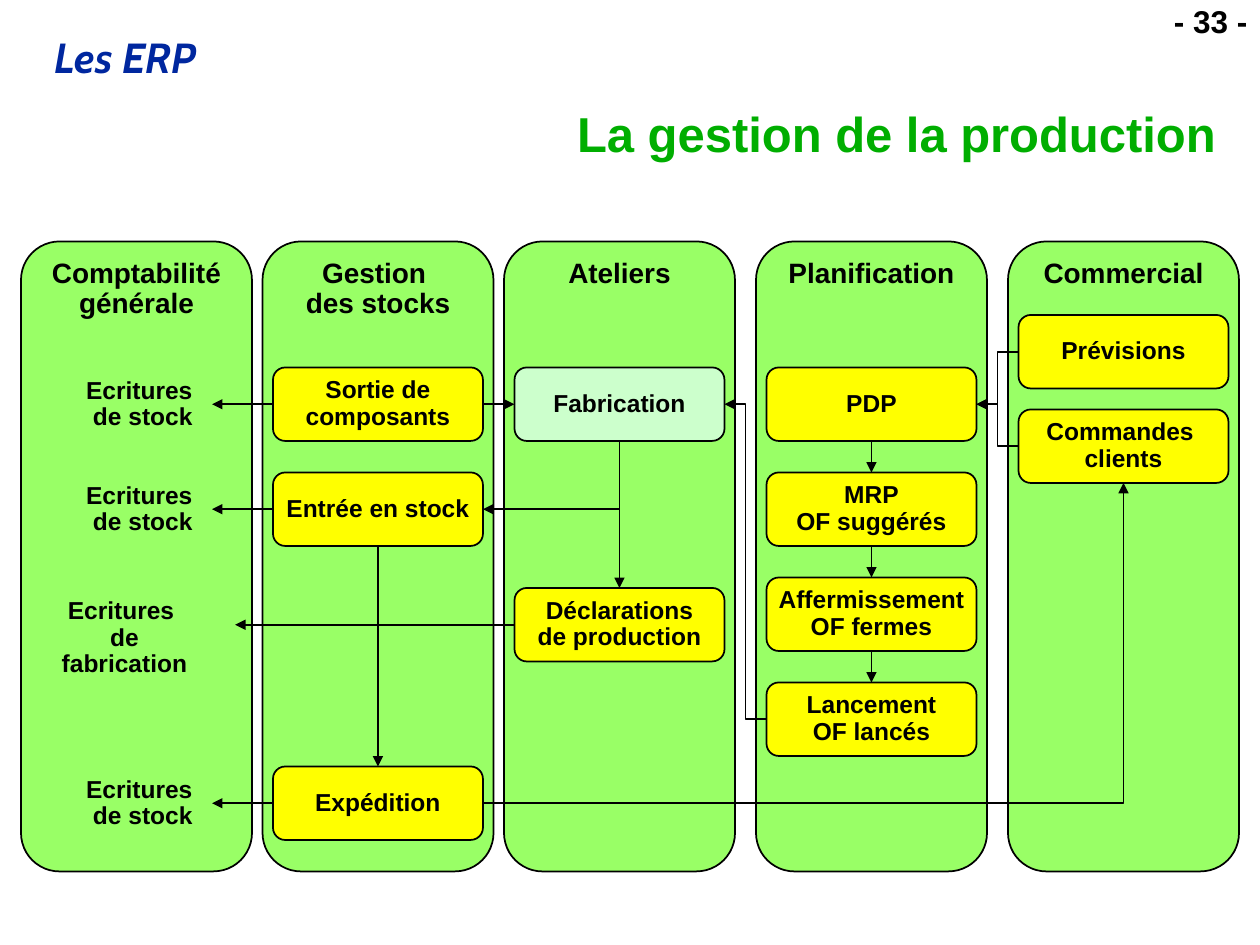
from dataclasses import dataclass

from pptx import Presentation
from pptx.dml.color import RGBColor
from pptx.enum.shapes import MSO_CONNECTOR as CONN, MSO_SHAPE
from pptx.enum.text import MSO_ANCHOR as ANCHOR, PP_ALIGN as ALIGN
from pptx.oxml.ns import qn
from pptx.util import Inches, Pt
from lxml.etree import SubElement


@dataclass(frozen=True)
class Theme:
    font: str = "Arial"
    brand_font: str = "Cabin"
    ink: str = "000000"
    brand: str = "00279F"
    title: str = "00AE00"
    column: str = "99FF66"
    box: str = "FFFF00"
    highlight: str = "CCFFCC"
    brand_size: int = 24
    title_size: int = 28
    page_size: int = 18
    head_size: int = 16
    box_size: int = 14


T = Theme()

# Content: lengths in grid units of 1/12 inch; \v is a line break
COLUMNS = [  # left, heading
    (2, "Comptabilité\vgénérale"),
    (25, "Gestion \vdes stocks"),
    (48, "Ateliers"),
    (72, "Planification"),
    (96, "Commercial"),
]
BOXES = {  # key: column, top, text
    "sortie": (1, 35, "Sortie de\vcomposants"),
    "entree": (1, 45, "Entrée en stock"),
    "expedition": (1, 73, "Expédition"),
    "fabrication": (2, 35, "Fabrication"),
    "declarations": (2, 56, "Déclarations\vde production"),
    "pdp": (3, 35, "PDP"),
    "mrp": (3, 45, "MRP\vOF suggérés"),
    "affermissement": (3, 55, "Affermissement\vOF fermes"),
    "lancement": (3, 65, "Lancement\vOF lancés"),
    "previsions": (4, 30, "Prévisions"),
    "commandes": (4, 39, "Commandes \vclients"),
}
STOCK = "Ecritures \nde stock"
LABELS = {  # key: source box, left, width, text
    "ecr_sortie": ("sortie", 7, 13.2, STOCK),
    "ecr_entree": ("entree", 7, 13.2, STOCK),
    "ecr_fabrication": ("declarations", 4.8, 17.6, "Ecritures \nde fabrication"),
    "ecr_expedition": ("expedition", 7, 13.2, STOCK),
}
TOP, LEFT, BOTTOM, RIGHT = range(4)
STRAIGHT_ARROWS = [
    ("pdp", BOTTOM, "mrp", TOP),
    ("mrp", BOTTOM, "affermissement", TOP),
    ("affermissement", BOTTOM, "lancement", TOP),
    ("sortie", RIGHT, "fabrication", LEFT),
    ("fabrication", BOTTOM, "declarations", TOP),
    ("entree", BOTTOM, "expedition", TOP),
] + [(source, LEFT, key, RIGHT) for key, (source, *_) in LABELS.items()]
STEP_ARROWS = [
    ("previsions", LEFT, "pdp", RIGHT),
    ("commandes", LEFT, "pdp", RIGHT),
    ("lancement", LEFT, "fabrication", RIGHT),
]
COLUMN_TOP, COLUMN_W, COLUMN_H = 23, 22, 60
BOX_W, BOX_H, LABEL_H = 20, 7, 6.2


def grid(*units):
    return [Inches(u / 12) for u in units]


def rgb(code):
    return RGBColor.from_string(code)


def write(tf, text, size, color=T.ink, align=ALIGN.CENTER, font=T.font, italic=None):
    tf.text = text
    for p in tf.paragraphs:
        p.alignment, p.line_spacing = align, 0.9
        f = p.font
        f.name, f.size, f.bold, f.italic = font, Pt(size), True, italic
        f.color.rgb = rgb(color)


def add_text(s, place, text, size, **style):
    sp = s.shapes.add_textbox(*place)
    write(sp.text_frame, text, size, **style)
    return sp


def add_card(s, place, text, size, fill, anchor):
    sp = s.shapes.add_shape(MSO_SHAPE.ROUNDED_RECTANGLE, *place)
    sp.shadow.inherit = False
    sp.fill.solid()
    sp.fill.fore_color.rgb = rgb(fill)
    sp.line.color.rgb, sp.line.width = rgb(T.ink), Pt(1)
    tf = sp.text_frame
    tf.word_wrap, tf.vertical_anchor = False, anchor
    write(tf, text, size)
    return sp


def add_arrow(s, kind, start, start_side, stop, stop_side, corner=False):
    c = s.shapes.add_connector(kind, 0, 0, 0, 0)
    c.begin_connect(start, start_side)
    c.end_connect(stop, stop_side)
    c.line.color.rgb, c.line.width = rgb(T.ink), Pt(1)
    return c


def finish_arrow(c, end="a:tailEnd", corner=False):
    sppr = c._element.spPr
    if corner:
        sppr.find(qn("a:prstGeom")).set("prst", "bentConnector2")
    SubElement(sppr.find(qn("a:ln")), qn(end)).set("type", "triangle")
    SubElement(sppr, qn("a:effectLst"))


prs = Presentation()
prs.slide_width, prs.slide_height = Inches(10), Inches(7.5)
s = prs.slides.add_slide(prs.slide_layouts[5])

# Header and title
add_text(s, grid(4, 3, 97, 5.5), "Les ERP", T.brand_size, color=T.brand,
         align=ALIGN.LEFT, font=T.brand_font, italic=True)
add_text(s, grid(109, 0, 11, 4.5), " - 33 -", T.page_size, align=ALIGN.RIGHT)
title = s.shapes.title
title.left, title.top, title.width, title.height = grid(5, 10, 112, 6)
title.text_frame.vertical_anchor = ANCHOR.MIDDLE
write(title.text_frame, "La gestion de la production", T.title_size,
      color=T.title, align=ALIGN.RIGHT)

# Department columns
for left, heading in COLUMNS:
    add_card(s, grid(left, COLUMN_TOP, COLUMN_W, COLUMN_H), heading,
             T.head_size, T.column, ANCHOR.TOP)

# Process boxes, centred in their column
nodes = {}
for key, (col, top, text) in BOXES.items():
    left = COLUMNS[col][0] + (COLUMN_W - BOX_W) / 2
    fill = T.highlight if key == "fabrication" else T.box
    nodes[key] = add_card(s, grid(left, top, BOX_W, BOX_H), text,
                          T.box_size, fill, ANCHOR.MIDDLE)

# Accounting entries, level with their source box
for key, (source, left, width, text) in LABELS.items():
    top = BOXES[source][1] + (BOX_H - LABEL_H) / 2
    nodes[key] = add_text(s, grid(left, top, width, LABEL_H), text, T.box_size)
    nodes[key].text_frame.word_wrap = False
tf = nodes["ecr_fabrication"].text_frame
tf.word_wrap = True
tf.margin_left, tf.margin_right = Inches(0.08), Inches(0.37)

# Flows
for kind, arrows in ((CONN.STRAIGHT, STRAIGHT_ARROWS), (CONN.ELBOW, STEP_ARROWS)):
    for start, start_side, stop, stop_side in arrows:
        finish_arrow(add_arrow(s, kind, nodes[start], start_side,
                               nodes[stop], stop_side))

# One-corner flows run level first, then up
for start, stop, end in (("entree", "fabrication", "a:headEnd"),
                         ("expedition", "commandes", "a:tailEnd")):
    finish_arrow(add_arrow(s, CONN.ELBOW, nodes[start], RIGHT, nodes[stop], BOTTOM),
                 end, corner=True)

prs.save("out.pptx")
